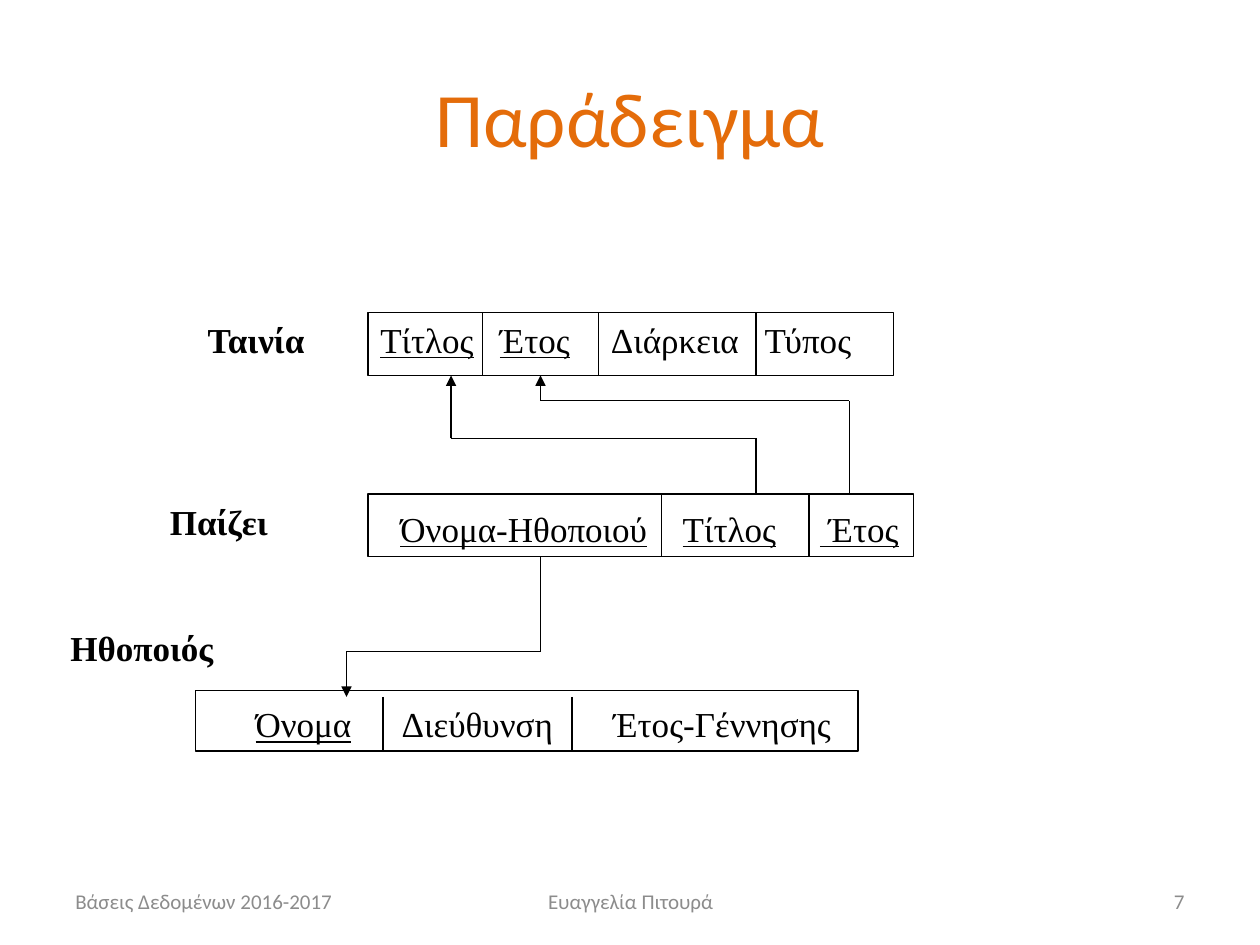
from itertools import pairwise
from lxml.etree import SubElement
from pptx import Presentation
from pptx.dml.color import RGBColor
from pptx.enum.shapes import MSO_CONNECTOR, MSO_SHAPE
from pptx.enum.text import MSO_ANCHOR, PP_ALIGN
from pptx.oxml.ns import qn
from pptx.util import Inches, Pt

BLACK = RGBColor(0x00, 0x00, 0x00)
GRAY = RGBColor(0x8C, 0x8C, 0x8C)
ORANGE = RGBColor(0xE4, 0x6C, 0x0A)

HEAD = {"name": "Calibri", "size": Pt(44)}
FOOT = {"name": "Calibri", "size": Pt(12)}
FIELD = {"name": "Times New Roman", "size": Pt(20)}
KEY = {**FIELD, "underline": True}
LABEL = {**FIELD, "bold": True}

TABLES = [
    {"name": ("Ταινία", 1.55, 2.48), "box": (2.92, 2.48, 4.17, 0.5),
     "bars": (2.48, 2.98, [3.83, 4.75, 6]), "top": 2.48,
     "cells": [("Τίτλος", 2.92, KEY), ("Έτος", 3.87, KEY),
               ("Διάρκεια", 4.75, FIELD), ("Τύπος", 5.97, FIELD)]},
    {"name": ("Παίζει", 1.25, 3.92), "box": (2.92, 3.92, 4.33, 0.5),
     "bars": (3.92, 4.42, [5.25, 6.42]), "top": 3.98,
     "cells": [("Όνομα-Ηθοποιού", 3.08, KEY), ("Τίτλος", 5.32, KEY),
               (" Έτος", 6.41, KEY)]},
    {"name": ("Ηθοποιός", 0.46, 4.92), "box": (1.55, 5.48, 5.26, 0.48),
     "bars": (5.53, 5.96, [3.04, 4.54]), "top": 5.53,
     "cells": [("Όνομα", 1.93, KEY), ("Διεύθυνση", 3.09, FIELD),
               ("Έτος-Γέννησης", 4.77, FIELD)]},
]

LINKS = [
    [(6, 3.92), (6, 3.48), (3.58, 3.48), (3.58, 2.98)],
    [(6.74, 3.92), (6.74, 3.18), (4.29, 3.18), (4.29, 2.98)],
    [(4.29, 4.42), (4.29, 5.17), (2.75, 5.17), (2.75, 5.53)],
]

FOOTERS = [
    ("Βάσεις Δεδομένων 2016-2017", 0.5, 2.33, PP_ALIGN.LEFT),
    ("Ευαγγελία Πιτουρά", 3.42, 3.17, PP_ALIGN.CENTER),
    ("7", 7.17, 2.33, PP_ALIGN.RIGHT),
]


def fill_text(shape, text, style, color, align=PP_ALIGN.LEFT,
              anchor=MSO_ANCHOR.TOP):
    frame = shape.text_frame
    frame.word_wrap = True
    frame.vertical_anchor = anchor
    par = frame.paragraphs[0]
    par.alignment = align
    run = par.add_run()
    run.text = text
    for key, value in style.items():
        setattr(run.font, key, value)
    run.font.color.rgb = color


def add_text(slide, area, *args):
    box = slide.shapes.add_textbox(*map(Inches, area))
    fill_text(box, *args)


def add_box(slide, area):
    box = slide.shapes.add_shape(MSO_SHAPE.RECTANGLE, *map(Inches, area))
    box.shadow.inherit = False
    box.fill.background()
    box.line.color.rgb = BLACK
    box.line.width = Pt(0.75)


def add_line(slide, start, end):
    line = slide.shapes.add_connector(
        MSO_CONNECTOR.STRAIGHT, *map(Inches, (*start, *end)))
    line.line.color.rgb = BLACK
    line.line.width = Pt(0.75)
    SubElement(line._element.spPr, qn("a:effectLst"))
    return line


def add_link(slide, points):
    lines = [add_line(slide, *pair) for pair in pairwise(points)]
    stroke = lines[-1].line._get_or_add_ln()
    SubElement(stroke, qn("a:tailEnd"), type="triangle")


def add_table(slide, table):
    name, left, top = table["name"]
    add_text(slide, (left, top, 1.5, 0.43), name, LABEL, BLACK)
    add_box(slide, table["box"])
    high, low, bars = table["bars"]
    for x in bars:
        add_line(slide, (x, high), (x, low))
    for text, x, style in table["cells"]:
        add_text(slide, (x, table["top"], 2.3, 0.43), text, style, BLACK)


def add_title(slide, text):
    title = slide.shapes.title
    place = {"left": 0.5, "top": 0.3, "width": 9, "height": 1.25}
    for key, value in place.items():
        setattr(title, key, Inches(value))
    fill_text(title, text, HEAD, ORANGE, PP_ALIGN.CENTER, MSO_ANCHOR.MIDDLE)


def main():
    deck = Presentation()
    deck.slide_width = Inches(10)
    deck.slide_height = Inches(7.5)
    slide = deck.slides.add_slide(deck.slide_layouts[5])
    add_title(slide, "Παράδειγμα")
    for table in TABLES:
        add_table(slide, table)
    for points in LINKS:
        add_link(slide, points)
    for text, left, width, align in FOOTERS:
        add_text(slide, (left, 6.95, width, 0.4), text, FOOT, GRAY, align,
                 MSO_ANCHOR.MIDDLE)
    deck.save("out.pptx")


if __name__ == "__main__":
    main()
